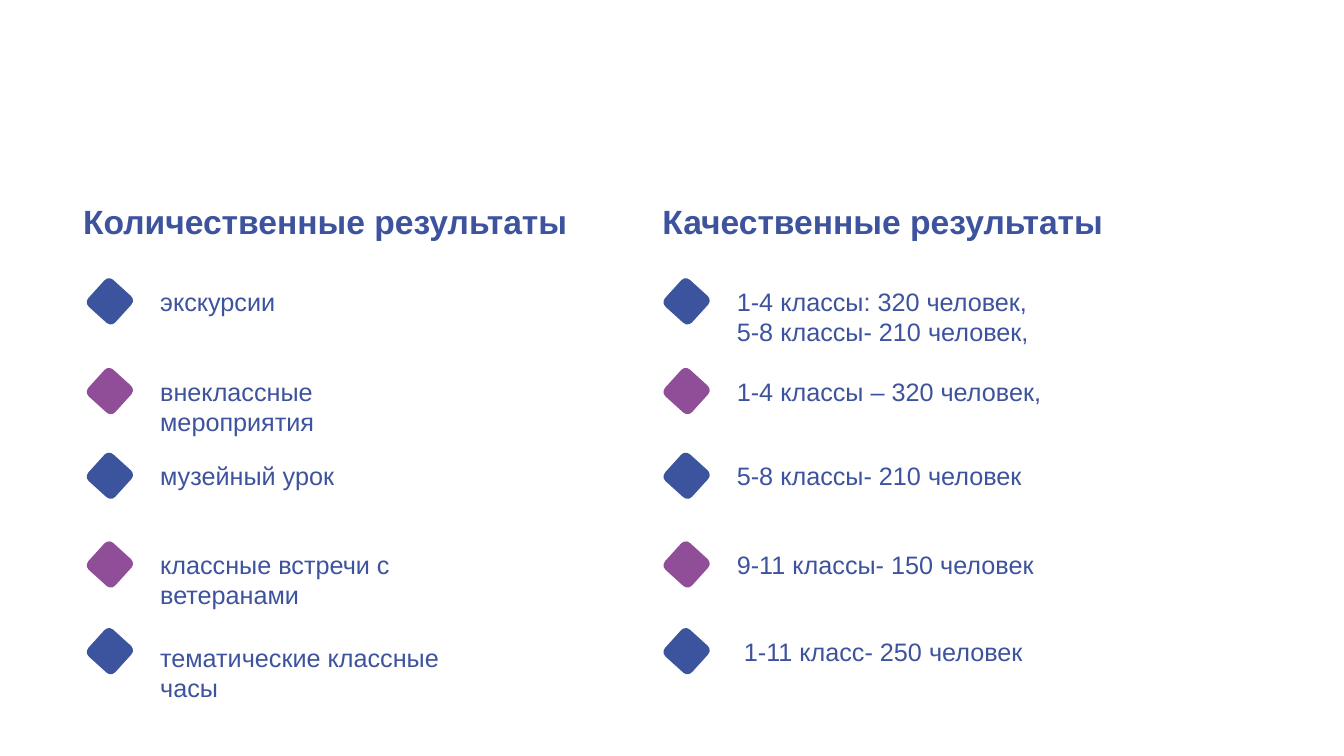
import pptx
import pptx.util
import pptx.dml.color
import pptx.enum.shapes
import pptx.enum.text

EMU_PER_PX = 9144
COLORS = {"blue": "3C539E", "purple": "914E98", "text": "3E539E"}
ROW_TOPS = [281, 370, 454, 542, 628]
MARKER_SIZE = 36
TEXT_OFFSET = 58
TEXT_RISE = 2

QUANTITATIVE = ["экскурсии", "внеклассные мероприятия", "музейный урок",
                "классные встречи с ветеранами", "тематические классные часы"]
QUALITATIVE = ["1-4 классы: 320 человек, 5-8 классы- 210 человек,",
               "1-4 классы – 320 человек,", "5-8 классы- 210 человек",
               "9-11 классы- 150 человек", " 1-11 класс- 250 человек"]


def px(*lengths):
    """Turn pixel lengths into EMU."""
    return [pptx.util.Emu(length * EMU_PER_PX) for length in lengths]


def color(name):
    """Look up a named colour."""
    return pptx.dml.color.RGBColor.from_string(COLORS[name])


def add_marker(page, left, top, fill):
    """Draw a rounded square turned into a diamond."""
    kind = pptx.enum.shapes.MSO_SHAPE.ROUNDED_RECTANGLE
    marker = page.shapes.add_shape(kind, *px(left, top, MARKER_SIZE, MARKER_SIZE))
    marker.rotation = 42.2
    marker.shadow.inherit = False
    marker.fill.solid()
    marker.fill.fore_color.rgb = color(fill)
    marker.line.fill.background()


def add_text(page, left, top, width, height, text, size, heading=False):
    """Write one paragraph, centred and bold for a heading."""
    box = page.shapes.add_textbox(*px(left, top, width, height))
    frame = box.text_frame
    frame.word_wrap = not heading
    frame.auto_size = pptx.enum.text.MSO_AUTO_SIZE.SHAPE_TO_FIT_TEXT
    para = frame.paragraphs[0]
    para.text = text
    para.font.name = "Arial"
    para.font.size = pptx.util.Pt(size)
    para.font.bold = heading
    para.font.color.rgb = color("text")
    if heading:
        para.alignment = pptx.enum.text.PP_ALIGN.CENTER


def add_results(page, left, items, last_shift=0):
    """List results beside markers of alternating colour."""
    for index, (top, item) in enumerate(zip(ROW_TOPS, items)):
        add_marker(page, left, top, ("blue", "purple")[index % 2])
        shift = last_shift if index == len(items) - 1 else 0
        height = 71 if len(item) > 24 or item == QUANTITATIVE[1] else 40
        add_text(page, left + TEXT_OFFSET, top - TEXT_RISE + shift, 325, height, item, 18)


def main():
    """Build and save the results slide."""
    deck = pptx.Presentation()
    deck.slide_width, deck.slide_height = px(1333, 750)
    page = deck.slides.add_slide(deck.slide_layouts[6])
    add_results(page, 663, QUALITATIVE)
    add_results(page, 91, QUANTITATIVE, last_shift=6)
    add_text(page, 70, 194, 505, 50, "Количественные результаты", 24, heading=True)
    add_text(page, 645, 194, 461, 50, "Качественные результаты", 24, heading=True)
    deck.save("out.pptx")


if __name__ == "__main__":
    main()
